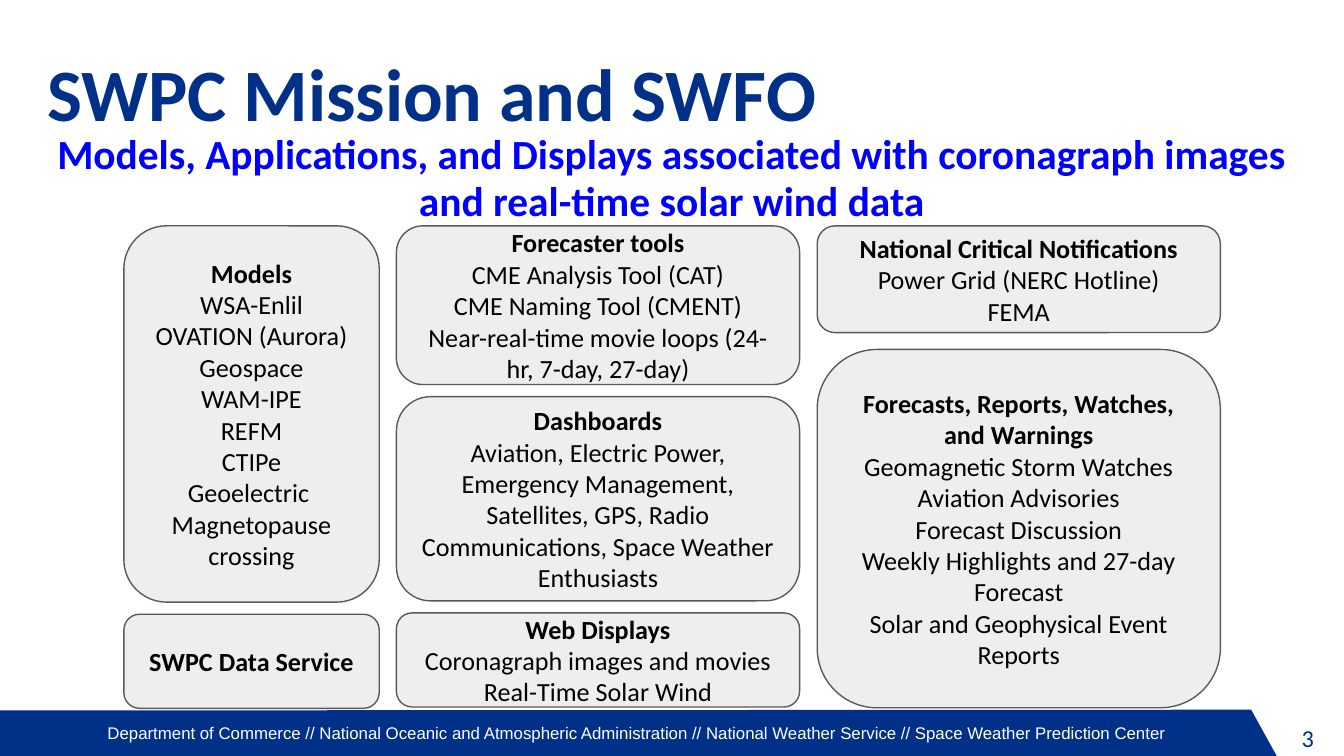
from dataclasses import dataclass

from pptx import Presentation
from pptx import util as u
from pptx.dml.color import RGBColor
from pptx.enum import shapes, text

NAVY = "003087"
BLUE = "0000FF"
WHITE = "FFFFFF"
BLACK = "000000"
CARD_FILL = "EEEEEE"
CARD_LINE = "595959"
CARDS_TOP = 121
INSET = 7.2


@dataclass(frozen=True)
class Card:
    height: float
    heading: str
    lines: tuple[str, ...] = ()
    side_inset: float = INSET


@dataclass(frozen=True)
class Column:
    left: float
    width: float
    gap: float
    cards: tuple[Card, ...]


COLUMNS = (
    Column(66.4, 136.8, 6.5, (
        Card(201.6, "Models", (
            "WSA-Enlil",
            "OVATION (Aurora)",
            "Geospace",
            "WAM-IPE",
            "REFM",
            "CTIPe",
            "Geoelectric ",
            "Magnetopause crossing",
        ), 0),
        Card(50.4, "SWPC Data Service"),
    )),
    Column(212.4, 216, 6.5, (
        Card(85, "Forecaster tools", (
            "CME Analysis Tool (CAT)",
            "CME Naming Tool (CMENT)",
            "Near-real-time movie loops (24-hr, 7-day, 27-day)",
        )),
        Card(109.4, "Dashboards", (
            "Aviation, Electric Power, Emergency Management, Satellites, GPS, Radio "
            "Communications, Space Weather Enthusiasts",
        )),
        Card(50.4, "Web Displays", (
            "Coronagraph images and movies",
            "Real-Time Solar Wind",
        )),
    )),
    Column(437.8, 216, 9, (
        Card(57.2, "National Critical Notifications", (
            "Power Grid (NERC Hotline)",
            "FEMA",
        )),
        Card(192, "Forecasts, Reports, Watches, and Warnings", (
            "Geomagnetic Storm Watches",
            "Aviation Advisories",
            "Forecast Discussion",
            "Weekly Highlights and 27-day Forecast",
            "Solar and Geophysical Event Reports",
        )),
    )),
)


def color(value: str) -> RGBColor:
    return RGBColor.from_string(value)


def points(*values: float) -> list[u.Length]:
    return [u.Pt(value) for value in values]


def set_frame(shape, anchor, left=INSET, top=INSET, right=INSET, bottom=INSET):
    frame = shape.text_frame
    frame.word_wrap = True
    frame.auto_size = text.MSO_AUTO_SIZE.NONE
    frame.vertical_anchor = anchor
    frame.margin_left, frame.margin_top, frame.margin_right, frame.margin_bottom = points(
        left, top, right, bottom)
    return frame


def write(paragraph, words: str, size: float, hex_color: str, bold: bool = False,
          align=text.PP_ALIGN.CENTER, font: str = "Calibri") -> None:
    paragraph.alignment = align
    run = paragraph.add_run()
    run.text = words
    run.font.name = font
    run.font.size = u.Pt(size)
    run.font.bold = bold
    run.font.color.rgb = color(hex_color)


def draw_title(slide) -> None:
    title = slide.shapes.title
    title.left, title.top, title.width, title.height = points(18, 26, 684, 46)
    frame = set_frame(title, text.MSO_ANCHOR.MIDDLE)
    write(frame.paragraphs[0], "SWPC Mission and SWFO", 39.6, NAVY, True, text.PP_ALIGN.LEFT)


def draw_subtitle(slide) -> None:
    box = slide.shapes.add_textbox(*points(18, 63.4, 684, 65.5))
    paragraph = set_frame(box, text.MSO_ANCHOR.TOP).paragraphs[0]
    paragraph.line_spacing = 0.95
    write(paragraph, "Models, Applications, and Displays associated with coronagraph images "
          "and real-time solar wind data", 22.2, BLUE, True)


def draw_footer(slide) -> None:
    builder = slide.shapes.build_freeform(*points(0, 380.6))
    corners = ((670.3, 380.2), (684, 405), (0, 405))
    builder.add_line_segments([points(*corner) for corner in corners], close=True)
    band = builder.convert_to_shape()
    band.shadow.inherit = False
    band.fill.solid()
    band.fill.fore_color.rgb = color(NAVY)
    band.line.fill.background()
    frame = set_frame(band, text.MSO_ANCHOR.MIDDLE, 57.6, 0, INSET, 0)
    write(frame.paragraphs[0], "Department of Commerce // National Oceanic and Atmospheric "
          "Administration // National Weather Service // Space Weather Prediction Center",
          9, WHITE, align=text.PP_ALIGN.LEFT, font="Arial")


def draw_page_number(slide) -> None:
    box = slide.shapes.add_textbox(*points(682.6, 380.2, 36, 25))
    write(set_frame(box, text.MSO_ANCHOR.TOP).paragraphs[0], "3", 13, NAVY)


def draw_card(slide, card: Card, left: float, top: float, width: float) -> None:
    shape = slide.shapes.add_shape(
        shapes.MSO_SHAPE.ROUNDED_RECTANGLE, *points(left, top, width, card.height))
    shape.adjustments[0] = 0.167
    shape.shadow.inherit = False
    shape.fill.solid()
    shape.fill.fore_color.rgb = color(CARD_FILL)
    shape.line.color.rgb = color(CARD_LINE)
    shape.line.width = u.Pt(0.75)
    frame = set_frame(shape, text.MSO_ANCHOR.MIDDLE, left=card.side_inset, right=card.side_inset)
    write(frame.paragraphs[0], card.heading, 14, BLACK, True)
    for line in card.lines:
        write(frame.add_paragraph(), line, 14, BLACK)


def draw_column(slide, column: Column) -> None:
    top = CARDS_TOP
    for card in column.cards:
        draw_card(slide, card, column.left, top, column.width)
        top += card.height + column.gap


def main() -> None:
    presentation = Presentation()
    presentation.slide_width, presentation.slide_height = points(720, 405)
    slide = presentation.slides.add_slide(presentation.slide_layouts.get_by_name("Title Only"))
    draw_footer(slide)
    draw_title(slide)
    draw_subtitle(slide)
    draw_page_number(slide)
    for column in COLUMNS:
        draw_column(slide, column)
    presentation.save("out.pptx")


if __name__ == "__main__":
    main()
